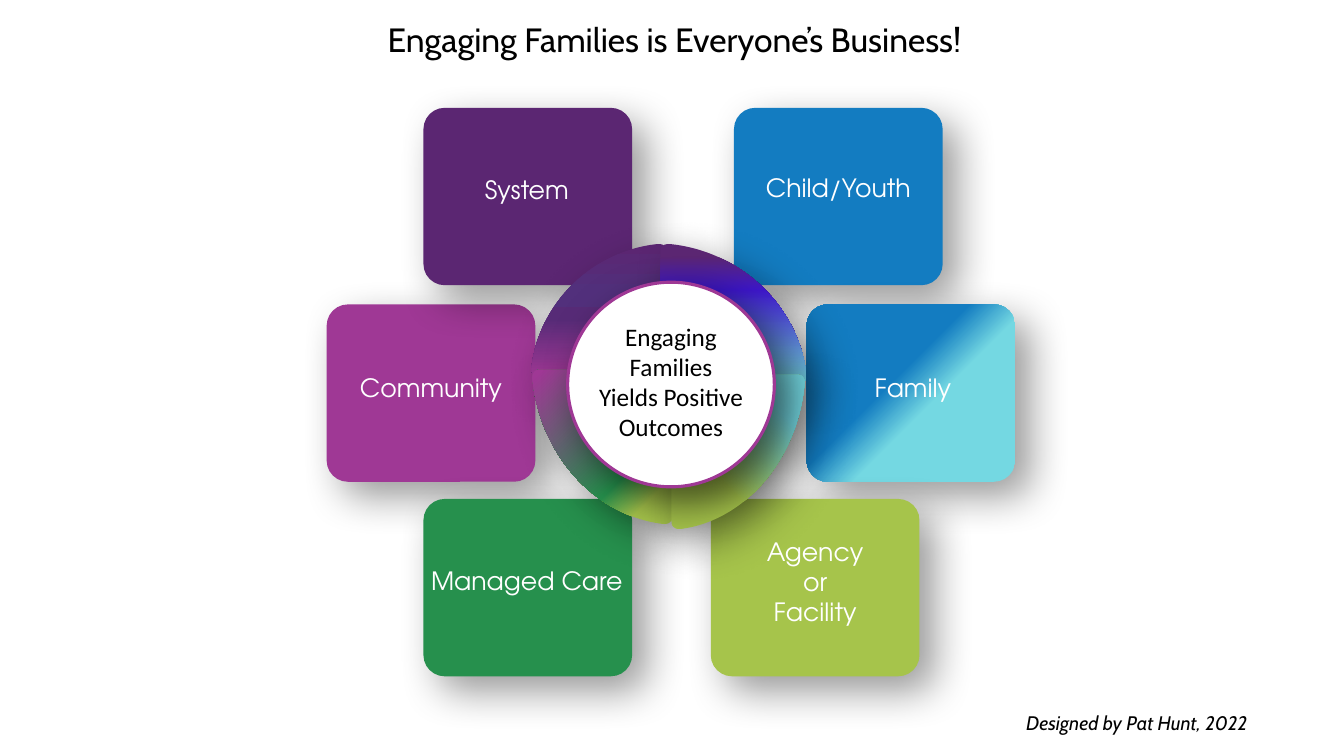
from dataclasses import dataclass

from lxml.etree import SubElement
from pptx import Presentation
from pptx.dml.color import RGBColor
from pptx.enum.shapes import MSO_SHAPE
from pptx.enum.text import MSO_ANCHOR, PP_ALIGN
from pptx.oxml.ns import qn
from pptx.util import Inches, Pt


@dataclass(frozen=True)
class Theme:
    white: str = "FFFFFF"
    black: str = "000000"
    purple: str = "5B2672"
    indigo: str = "52307C"
    plum: str = "572B77"
    violet: str = "3E17CC"
    blue: str = "137CC1"
    teal: str = "74D8E2"
    lime: str = "A6C44B"
    green: str = "26904D"
    magenta: str = "9F3895"
    label_font: str = "TeX Gyre Adventor"
    hub_font: str = "Calibri"
    title_font: str = "Cabin"
    title_size: int = 24
    body_size: int = 18
    credit_size: int = 14


T = Theme()
TILE_W, TILE_H = 2.07, 1.76
TILES = [
    (3.24, 3.02, T.magenta, ["Community"], -0.08, 0.62),
    (4.2, 4.95, T.green, ["Managed Care"], -0.09, 0.61),
    (7.28, 1.07, T.blue, ["Child/Youth"], -0.08, 0.59),
    (4.2, 1.07, T.purple, ["System"], -0.09, 0.61),
    (8, 3.02, (225, [(42, T.teal), (58, T.blue)]), ["Family"], -0.06, 0.62),
    (7.05, 4.95, T.lime, ["Agency", "or", "Facility"], -0.08, 0.32),
]
WEDGES = [
    ((5.27, 2.42, 1.34, 1.31), -1, -1,
     (90, [(0, T.purple), (38, T.indigo), (57, T.plum), (100, T.magenta)])),
    ((6.55, 2.42, 1.45, 1.38), 1, -1,
     (90, [(9, T.purple), (33, T.violet), (100, T.teal)])),
    ((5.28, 3.67, 1.39, 1.53), -1, 1,
     (225, [(16, T.lime), (33, T.green), (97, T.magenta)])),
    ((6.66, 3.72, 1.32, 1.53), 1, 1,
     (315, [(34, T.lime), (79, T.teal)])),
]
WEDGE_START = (0.06, 0)
WEDGE_CURVES = [
    [(0.55, 0.05), (0.95, 0.45), (1, 0.95)],
    [(1, 0.98), (0.98, 1), (0.96, 1)],
    [(0, 1), (0, 1), (0, 1)],
    [(0, 0.05), (0, 0.05), (0, 0.05)],
    [(0, 0), (0.05, 0), WEDGE_START],
]


def paint(sp, fill):
    if isinstance(fill, str):
        sp.fill.solid()
        sp.fill.fore_color.rgb = RGBColor.from_string(fill)
        return
    angle, stops = fill
    sp.fill.background()
    spPr = sp._element.spPr
    grad = SubElement(spPr, qn("a:gradFill"), rotWithShape="1")
    spPr.replace(spPr.find(qn("a:noFill")), grad)
    gsLst = SubElement(grad, qn("a:gsLst"))
    for pos, color in stops:
        gs = SubElement(gsLst, qn("a:gs"), pos=str(pos * 1000))
        SubElement(gs, qn("a:srgbClr"), val=color)
    SubElement(grad, qn("a:lin"), ang=str(angle * 60000), scaled="0")


def style(sp, fill, line=None, shade=40):
    paint(sp, fill)
    if line:
        sp.line.color.rgb = RGBColor.from_string(line)
        sp.line.width = Pt(2.25)
    else:
        sp.line.fill.background()
    sp.shadow.inherit = False
    effects = sp._element.spPr.find(qn("a:effectLst"))
    shadow = SubElement(effects, qn("a:outerShdw"), blurRad=str(Pt(30)),
                        dist=str(Pt(15)), dir=str(45 * 60000),
                        algn="tl", rotWithShape="0")
    color = SubElement(shadow, qn("a:srgbClr"), val=T.black)
    SubElement(color, qn("a:alpha"), val=str(shade * 1000))


def add_text(s, box, lines, font, size, color, italic=False,
             anchor=MSO_ANCHOR.TOP):
    tf = s.shapes.add_textbox(*map(Inches, box)).text_frame
    tf.word_wrap = True
    tf.vertical_anchor = anchor
    for i, line in enumerate(lines):
        p = tf.add_paragraph() if i else tf.paragraphs[0]
        p.alignment = PP_ALIGN.CENTER
        r = p.add_run()
        r.text = line
        r.font.name = font
        r.font.size = Pt(size)
        r.font.italic = italic
        r.font.color.rgb = RGBColor.from_string(color)


def add_tile(s, box, fill):
    sp = s.shapes.add_shape(MSO_SHAPE.ROUNDED_RECTANGLE, *map(Inches, box))
    sp.adjustments[0] = 0.12
    style(sp, fill)


def add_label(s, box, lines, shift, drop):
    x, y, w, _ = box
    label = (x + shift, y + drop, w + 0.16, 0.1 + 0.3 * len(lines))
    add_text(s, label, lines, T.label_font, T.body_size, T.white)


def bend_segments(sp):
    segments = list(sp._element.iter(qn("a:lnTo")))
    for i in range(0, len(segments), 3):
        curve = SubElement(segments[i].getparent(), qn("a:cubicBezTo"))
        segments[i].addprevious(curve)
        for segment in segments[i:i + 3]:
            curve.append(segment[0])
            segment.getparent().remove(segment)


def add_wedge(s, box, side, end, fill):
    x, y, w, h = box

    def place(u, v):
        return (Inches(x + w * (u if side > 0 else 1 - u)),
                Inches(y + h * (v if end < 0 else 1 - v)))

    builder = s.shapes.build_freeform(*place(*WEDGE_START))
    builder.add_line_segments(
        [place(*pt) for curve in WEDGE_CURVES for pt in curve], close=True)
    sp = builder.convert_to_shape()
    bend_segments(sp)
    style(sp, fill)


def add_hub(s, box):
    x, y, w, h = box
    for wedge in WEDGES:
        add_wedge(s, *wedge)
    sp = s.shapes.add_shape(MSO_SHAPE.OVAL, *map(Inches, box))
    style(sp, T.white, T.magenta, 60)
    add_text(s, (x + 0.21, y + 0.33, w - 0.42, 1.31),
             ["Engaging Families Yields Positive Outcomes"],
             T.hub_font, T.body_size, T.black, anchor=MSO_ANCHOR.MIDDLE)


def build_slide(prs):
    s = prs.slides.add_slide(prs.slide_layouts[6])
    for x, y, fill, *_ in TILES:
        add_tile(s, (x, y, TILE_W, TILE_H), fill)
    add_hub(s, (5.63, 2.8, 2.05, 2.03))
    for x, y, _, lines, shift, drop in TILES:
        add_label(s, (x, y, TILE_W, TILE_H), lines, shift, drop)
    add_text(s, (1.14, 0.14, 11.1, 0.77),
             ["Engaging Families is Everyone’s Business!"],
             T.title_font, T.title_size, T.black)
    add_text(s, (9.58, 7, 3.39, 0.34), ["Designed by Pat Hunt, 2022"],
             T.title_font, T.credit_size, T.black, italic=True)


def main():
    prs = Presentation()
    prs.slide_width = Inches(13.33)
    prs.slide_height = Inches(7.5)
    build_slide(prs)
    prs.save("out.pptx")


if __name__ == "__main__":
    main()
